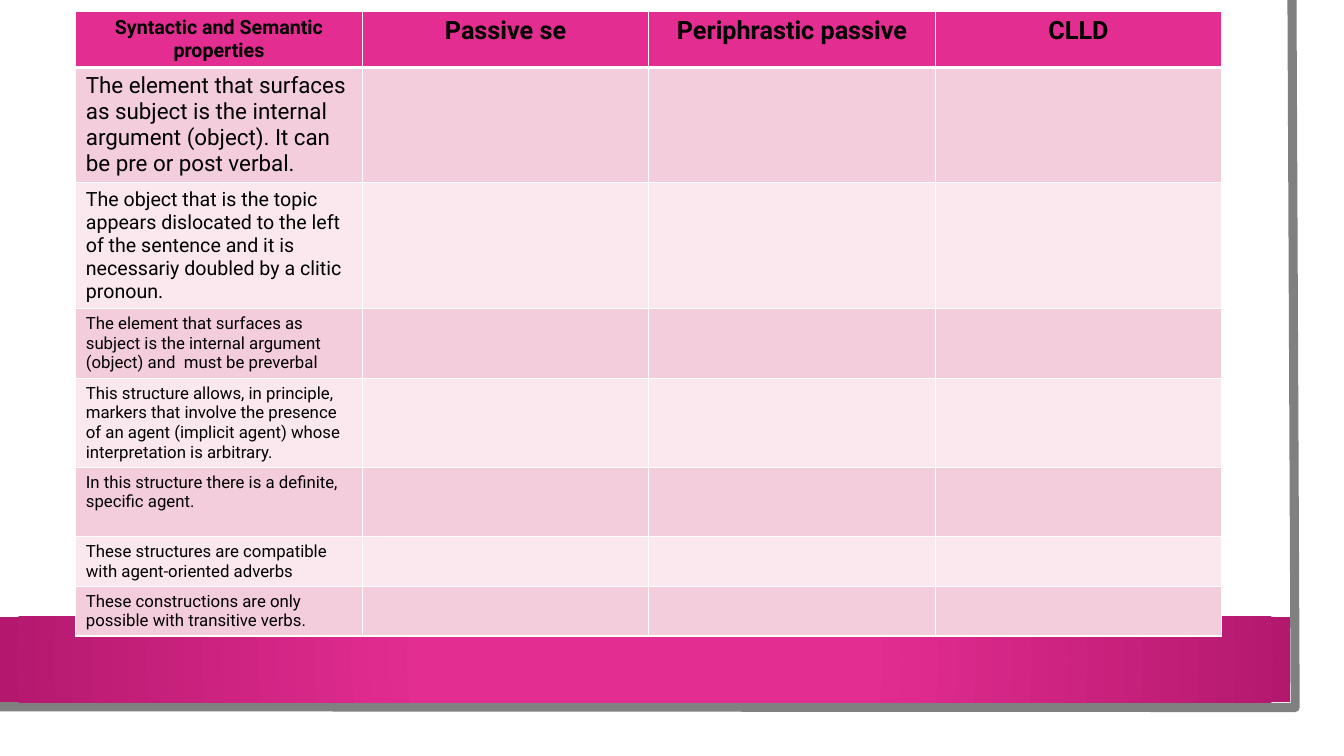
from lxml.etree import SubElement
from pptx import Presentation
from pptx.dml.color import RGBColor
from pptx.enum.shapes import MSO_SHAPE
from pptx.enum.text import PP_ALIGN
from pptx.oxml import parse_xml
from pptx.oxml.ns import nsdecls, qn
from pptx.util import Cm, Pt

PINK = RGBColor(0xE3, 0x2D, 0x91)
DARK_PINK = RGBColor(0xB4, 0x18, 0x6E)
ROSE = RGBColor(0xF4, 0xCD, 0xDC)
PALE_ROSE = RGBColor(0xFA, 0xE8, 0xEE)
GREY = RGBColor(0x80, 0x80, 0x80)
WHITE = RGBColor(0xFF, 0xFF, 0xFF)
BLACK = RGBColor(0, 0, 0)

HEADERS = [
    ("Syntactic and Semantic properties", 14),
    ("Passive se", 18),
    ("Periphrastic passive", 18),
    ("CLLD", 18),
]
PROPERTIES = [
    ("The element that surfaces as subject is the internal argument (object). "
     "It can be pre or post verbal.", 16, 2.9),
    ("The object that is the topic appears dislocated to the left of the sentence "
     "and it is necessariy doubled by a clitic pronoun.", 14, 3.15),
    ("The element that surfaces as subject is the internal argument (object) "
     "and  must be preverbal", 12, 1.76),
    ("This structure allows, in principle, markers that involve the presence of an agent "
     "(implicit agent) whose interpretation is arbitrary.", 12, 2.22),
    ("In this structure there is a definite, specific agent.", 12, 1.75),
    ("These structures are compatible with agent-oriented adverbs", 12, 1.25),
    ("These constructions are only possible with transitive verbs.", 12, 1.25),
]
HEADER_HEIGHT = 1.39
COLUMN_WIDTH = 7.22


def add_panel(page, left, top, width, height):
    """Add a white rectangle without outline or shadow."""
    panel = page.shapes.add_shape(
        MSO_SHAPE.RECTANGLE, Cm(left), Cm(top), Cm(width), Cm(height))
    panel.shadow.inherit = False
    panel.fill.solid()
    panel.fill.fore_color.rgb = WHITE
    panel.line.fill.background()
    return panel


def add_frame_edge(page):
    """Draw the grey edge down the right and along the bottom."""
    builder = page.shapes.build_freeform(Cm(32.56), 0)
    builder.add_line_segments(
        [(Cm(32.64), Cm(17.83)), (Cm(-0.08), Cm(17.81))], close=False)
    edge = builder.convert_to_shape()
    edge.shadow.inherit = False
    edge.fill.background()
    edge.line.color.rgb = GREY
    edge.line.width = Pt(6.5)


def fill_radial(shape):
    """Fill a shape with pink that darkens away from its centre."""
    shape.fill.gradient()
    stops = shape.fill.gradient_stops
    for stop, position, color in zip(stops, (0.34, 1), (PINK, DARK_PINK)):
        stop.position = position
        stop.color.rgb = color
    gradient = shape._element.spPr.find(qn("a:gradFill"))
    gradient.replace(gradient.find(qn("a:lin")), parse_xml(
        f'<a:path {nsdecls("a")} path="circle">'
        '<a:fillToRect l="50000" t="50000" r="50000" b="50000"/></a:path>'))


def style_cell(cell, color, top=1, bottom=1):
    """Give a cell white borders and a plain fill."""
    properties = cell._tc.get_or_add_tcPr()
    for side, width in (("L", 1), ("R", 1), ("T", top), ("B", bottom)):
        border = SubElement(properties, qn(f"a:ln{side}"), w=str(Pt(width)))
        solid = SubElement(border, qn("a:solidFill"))
        SubElement(solid, qn("a:srgbClr"), val=str(WHITE))
    cell.fill.solid()
    cell.fill.fore_color.rgb = color


def write_cell(cell, text, size, bold=False, align=PP_ALIGN.LEFT):
    """Write one paragraph into a cell."""
    para = cell.text_frame.paragraphs[0]
    para.text = text
    para.alignment = align
    para.font.name = "Roboto"
    para.font.size = Pt(size)
    para.font.bold = bold
    para.font.color.rgb = BLACK


def add_property_table(page):
    """Add the table that compares the three constructions."""
    heights = [HEADER_HEIGHT] + [height for _, _, height in PROPERTIES]
    table = page.shapes.add_table(
        len(heights), len(HEADERS), Cm(1.91), Cm(0.28),
        Cm(COLUMN_WIDTH * len(HEADERS)), Cm(sum(heights))).table
    for column in table.columns:
        column.width = Cm(COLUMN_WIDTH)
    for row, height in zip(table.rows, heights):
        row.height = Cm(height)
    for cell, (text, size) in zip(table.rows[0].cells, HEADERS):
        style_cell(cell, PINK, bottom=3)
        write_cell(cell, text, size, bold=True, align=PP_ALIGN.CENTER)
    for number, (text, size, _) in enumerate(PROPERTIES, 1):
        for cell in table.rows[number].cells:
            style_cell(cell, ROSE if number % 2 else PALE_ROSE, top=3 if number == 1 else 1)
        write_cell(table.cell(number, 0), text, size)


def main():
    """Build the slide and save it."""
    deck = Presentation()
    deck.slide_width, deck.slide_height = Cm(33.87), Cm(19.05)
    page = deck.slides.add_slide(deck.slide_layouts[6])
    add_panel(page, 0, 0, 33.27, 18.47)
    add_frame_edge(page)
    fill_radial(add_panel(page, 0, 15.54, 32.51, 2.16))
    add_property_table(page)
    deck.save("out.pptx")


if __name__ == "__main__":
    main()
